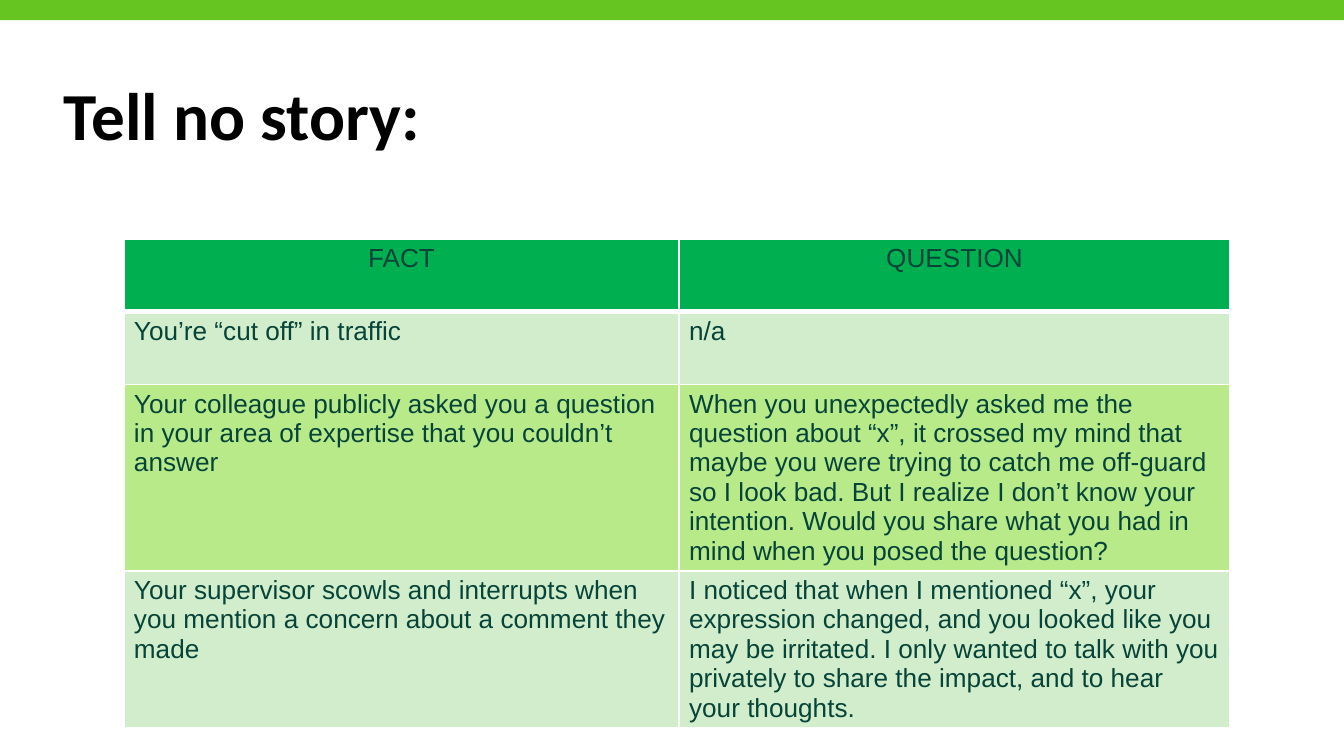
"""Build the "Tell no story" slide: a title above a table of facts and questions."""
from lxml import etree
from pptx import Presentation
from pptx.dml.color import RGBColor
from pptx.enum.shapes import MSO_SHAPE
from pptx.enum.text import MSO_ANCHOR, PP_ALIGN
from pptx.oxml.ns import qn
from pptx.util import Pt

RECTANGLE = MSO_SHAPE.RECTANGLE
MIDDLE, TOP = MSO_ANCHOR.MIDDLE, MSO_ANCHOR.TOP
LEFT, CENTER = PP_ALIGN.LEFT, PP_ALIGN.CENTER

TITLE = "Tell no story:"
ROWS = [
    ("FACT", "QUESTION"),
    ("You’re “cut off” in traffic", "n/a"),
    ("Your colleague publicly asked you a question in your area of expertise "
     "that you couldn’t answer",
     "When you unexpectedly asked me the question about “x”, it crossed my mind "
     "that maybe you were trying to catch me off-guard so I look bad. But I "
     "realize I don’t know your intention. Would you share what you had in mind "
     "when you posed the question?"),
    ("Your supervisor scowls and interrupts when you mention a concern about a "
     "comment they made",
     "I noticed that when I mentioned “x”, your expression changed, and you "
     "looked like you may be irritated. I only wanted to talk with you privately "
     "to share the impact, and to hear your thoughts."),
]
COLUMN_WIDTHS = (297.4, 295.2)
ROW_HEIGHTS = (39, 39, 67, 83)
TABLE_LEFT, TABLE_TOP = 66.4, 128

THEME = {
    "accent": "67C521", "header": "00B050", "bands": ("D2EDCB", "B8EA8A"),
    "rule": "FFFFFF", "title": "000000", "text": "064339",
    "title_font": "Calibri", "body_font": "Arial",
    "title_size": 36, "body_size": 14,
    "margin_x": 5.4, "margin_y": 2.7, "rule_width": 1, "header_rule": 3,
}


def color(name):
    return RGBColor.from_string(THEME[name])


def add_span(para, text, role, bold):
    span = para.add_run()
    span.text = text
    span.font.name = THEME["title_font" if role == "title" else "body_font"]
    span.font.size = Pt(THEME["title_size" if role == "title" else "body_size"])
    span.font.bold = bold
    span.font.color.rgb = color(role)


def set_margins(box):
    box.margin_left = box.margin_right = Pt(THEME["margin_x"])
    box.margin_top = box.margin_bottom = Pt(THEME["margin_y"])


def set_borders(cell, widths):
    properties = cell._tc.get_or_add_tcPr()
    for index, (side, width) in enumerate(widths.items()):
        line = etree.Element(qn("a:ln" + side), w=str(Pt(width)))
        if width:
            fill = etree.SubElement(line, qn("a:solidFill"))
            etree.SubElement(fill, qn("a:srgbClr"), val=THEME["rule"])
        else:
            etree.SubElement(line, qn("a:noFill"))
        properties.insert(index, line)


def add_bar(page, width):
    bar = page.shapes.add_shape(RECTANGLE, 0, 0, width, Pt(10.8))
    bar.shadow.inherit = False
    bar.fill.solid()
    bar.fill.fore_color.rgb = color("accent")
    bar.line.fill.background()


def format_title(page):
    title = page.shapes.title
    title.left, title.top, title.width, title.height = map(Pt, (28.8, 38.2, 644.4, 51))
    frame = title.text_frame
    frame.word_wrap = True
    frame.vertical_anchor = MIDDLE
    set_margins(frame)
    para = frame.paragraphs[0]
    para.alignment = LEFT
    para.line_spacing = 0.9
    para.space_after = Pt(4.5)
    add_span(para, TITLE, "title", True)


def add_answers(page):
    table = page.shapes.add_table(
        len(ROWS), len(COLUMN_WIDTHS), Pt(TABLE_LEFT), Pt(TABLE_TOP),
        Pt(sum(COLUMN_WIDTHS)), Pt(sum(ROW_HEIGHTS))).table
    for column, width in zip(table.columns, COLUMN_WIDTHS):
        column.width = Pt(width)
    for index, (texts, height) in enumerate(zip(ROWS, ROW_HEIGHTS)):
        table.rows[index].height = Pt(height)
        is_header = index == 0
        fill = THEME["header"] if is_header else THEME["bands"][(index - 1) % 2]
        widths = dict.fromkeys("LRTB", THEME["rule_width"])
        if is_header:
            widths["B"] = THEME["header_rule"]
        elif index == 1:
            widths["T"] = 0
        for cell, text in zip(table.rows[index].cells, texts):
            cell.fill.solid()
            cell.fill.fore_color.rgb = RGBColor.from_string(fill)
            cell.vertical_anchor = TOP
            set_margins(cell)
            set_borders(cell, widths)
            para = cell.text_frame.paragraphs[0]
            para.alignment = CENTER if is_header else LEFT
            add_span(para, text, "text", False)


def main():
    deck = Presentation()
    deck.slide_width, deck.slide_height = Pt(720), Pt(405)
    page = deck.slides.add_slide(deck.slide_layouts[5])
    add_bar(page, deck.slide_width)
    format_title(page)
    add_answers(page)
    deck.save("out.pptx")


if __name__ == "__main__":
    main()
